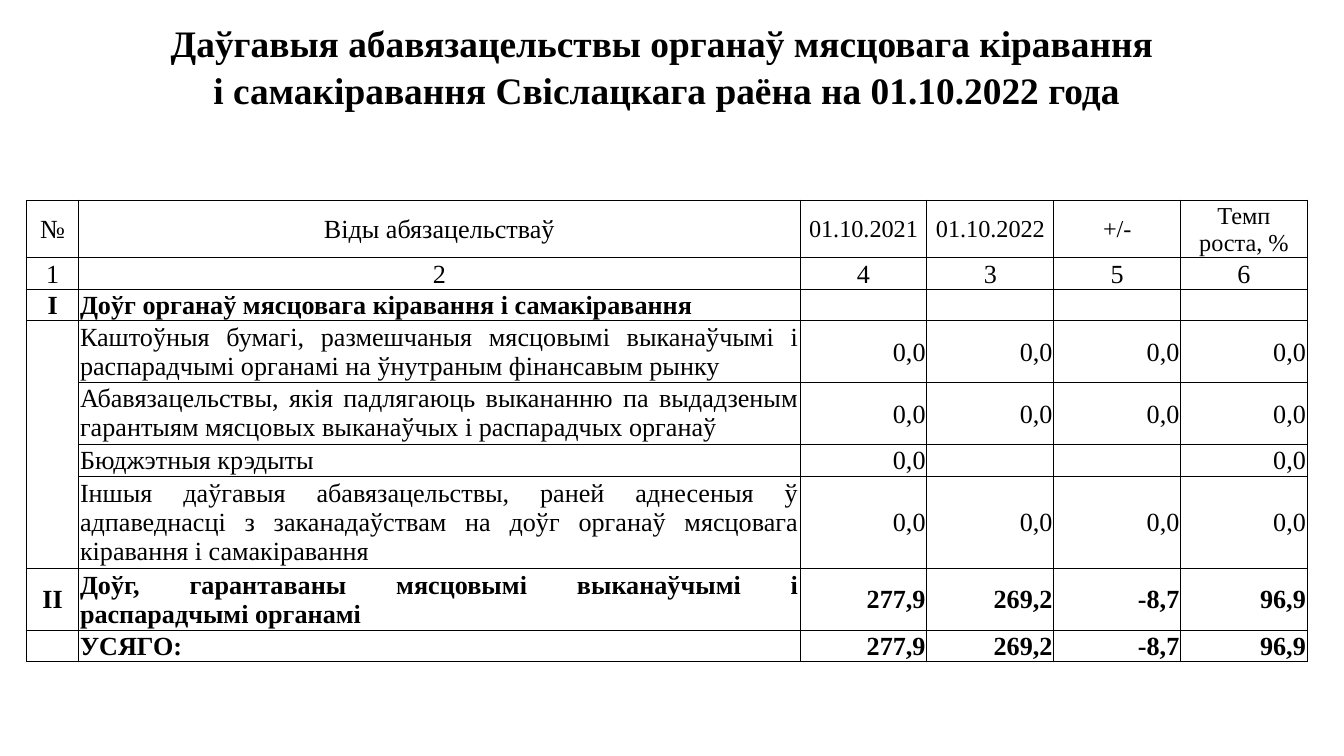
import pptx
import pptx.util
import pptx.dml.color
import pptx.enum.text
import lxml.etree

Pt = pptx.util.Pt
ALIGN = pptx.enum.text.PP_ALIGN
ANCHOR = pptx.enum.text.MSO_ANCHOR
BLACK = pptx.dml.color.RGBColor(0, 0, 0)
WHITE = pptx.dml.color.RGBColor(255, 255, 255)
FONT = "Times New Roman"
DRAWING = "{http://schemas.openxmlformats.org/drawingml/2006/main}"

HEADING = ("Даўгавыя абавязацельствы органаў мясцовага кіравання \n"
           "і самакіравання Свіслацкага раёна на 01.10.2022 года")
ZEROS = ["0,0"] * 4
TOTALS = ["277,9", "269,2", "-8,7", "96,9"]
ROWS = [
    (27.4, [""]),
    (51.8, [HEADING]),
    (27.4, [""]),
    (19.4, [""]),
    (30.8, ["№", "Віды абязацельстваў", "01.10.2021", "01.10.2022", "+/-", "Темп\nроста, %"]),
    (16.9, ["1", "2", "4", "3", "5", "6"]),
    (16.9, ["I", "Доўг органаў мясцовага кіравання і самакіравання", "", "", "", ""]),
    (33.2, ["", "Каштоўныя бумагі, размешчаныя мясцовымі выканаўчымі і "
                "распарадчымі органамі на ўнутраным фінансавым рынку", *ZEROS]),
    (33.2, ["", "Абавязацельствы, якія падлягаюць выкананню па выдадзеным "
                "гарантыям мясцовых выканаўчых і распарадчых органаў", *ZEROS]),
    (16.9, ["", "Бюджэтныя крэдыты", "0,0", "", "", "0,0"]),
    (49.3, ["", "Іншыя даўгавыя абавязацельствы, раней аднесеныя ў адпаведнасці "
                "з заканадаўствам на доўг органаў мясцовага кіравання і самакіравання", *ZEROS]),
    (33.4, ["II", "Доўг, гарантаваны мясцовымі выканаўчымі і распарадчымі органамі", *TOTALS]),
    (16.8, ["", "УСЯГО:", *TOTALS]),
]
COLUMNS = [28, 386.4, 68, 68, 68, 67.8]
TITLE, SPACER, HEADER, NUMBERS, GUARANTEES, TOTAL = 1, 3, 4, 5, 8, 12
BOLD_ROWS = (TITLE, 6, 11, TOTAL)
DEBT_KINDS = range(7, 11)


def visible_sides(row, column):
    if row < HEADER:
        return "B" if row == SPACER else ""
    if column == 0 and row in DEBT_KINDS:
        return "LR" + "T" * (row == DEBT_KINDS[0]) + "B" * (row == DEBT_KINDS[-1])
    return "LRTB"


def draw_borders(cell, sides):
    properties = cell._tc.get_or_add_tcPr()
    for side in "LRTB":
        line = lxml.etree.SubElement(properties, DRAWING + "ln" + side, w=str(Pt(0.5)))
        if side in sides:
            fill = lxml.etree.SubElement(line, DRAWING + "solidFill")
            lxml.etree.SubElement(fill, DRAWING + "srgbClr", val=str(BLACK))
        else:
            lxml.etree.SubElement(line, DRAWING + "noFill")


def alignment(row, column):
    if row <= NUMBERS or column == 0:
        return ALIGN.CENTER
    if column > 1:
        return ALIGN.RIGHT
    return ALIGN.LEFT if row == TOTAL else ALIGN.JUSTIFY


def anchor(row, column):
    if row in (TITLE, NUMBERS):
        return ANCHOR.BOTTOM
    return ANCHOR.TOP if (row, column) == (GUARANTEES, 1) else ANCHOR.MIDDLE


def text_size(row, column):
    if row == TITLE:
        return 20
    return 13 if row == HEADER and column > 1 else 14


def fill_cell(cell, text, row, column):
    cell.margin_left = cell.margin_right = cell.margin_top = Pt(0.7)
    cell.margin_bottom = 0
    cell.vertical_anchor = anchor(row, column)
    draw_borders(cell, visible_sides(row, column))
    if row > NUMBERS and column > 1:
        cell.fill.solid()
        cell.fill.fore_color.rgb = WHITE
    else:
        cell.fill.background()
    cell.text_frame.text = text
    size = Pt(text_size(row, column))
    for paragraph in cell.text_frame.paragraphs:
        paragraph.alignment = alignment(row, column)
        if row == TITLE:
            paragraph.line_spacing = 1.15
        for run in paragraph.runs:
            run.font.name = FONT
            run.font.size = size
            run.font.bold = row in BOLD_ROWS
            run.font.color.rgb = BLACK
        if not paragraph.runs:
            ending = lxml.etree.SubElement(paragraph._p, DRAWING + "endParaRPr", sz="1400")
            lxml.etree.SubElement(ending, DRAWING + "latin", typeface=FONT)


def main():
    deck = pptx.Presentation()
    deck.slide_width, deck.slide_height = Pt(720), Pt(405)
    slide = deck.slides.add_slide(deck.slide_layouts[6])
    heights = [height for height, _ in ROWS]
    debts = slide.shapes.add_table(len(ROWS), len(COLUMNS), Pt(14.2), Pt(-18.7),
                                   Pt(sum(COLUMNS)), Pt(sum(heights))).table
    debts.first_row = debts.horz_banding = False
    for column, width in enumerate(COLUMNS):
        debts.columns[column].width = Pt(width)
    for row, (height, texts) in enumerate(ROWS):
        debts.rows[row].height = Pt(height)
        if len(texts) == 1:
            debts.cell(row, 0).merge(debts.cell(row, len(COLUMNS) - 1))
        padded = texts + [""] * (len(COLUMNS) - len(texts))
        for column, text in enumerate(padded):
            fill_cell(debts.cell(row, column), text, row, column)
    deck.save("out.pptx")


if __name__ == "__main__":
    main()
